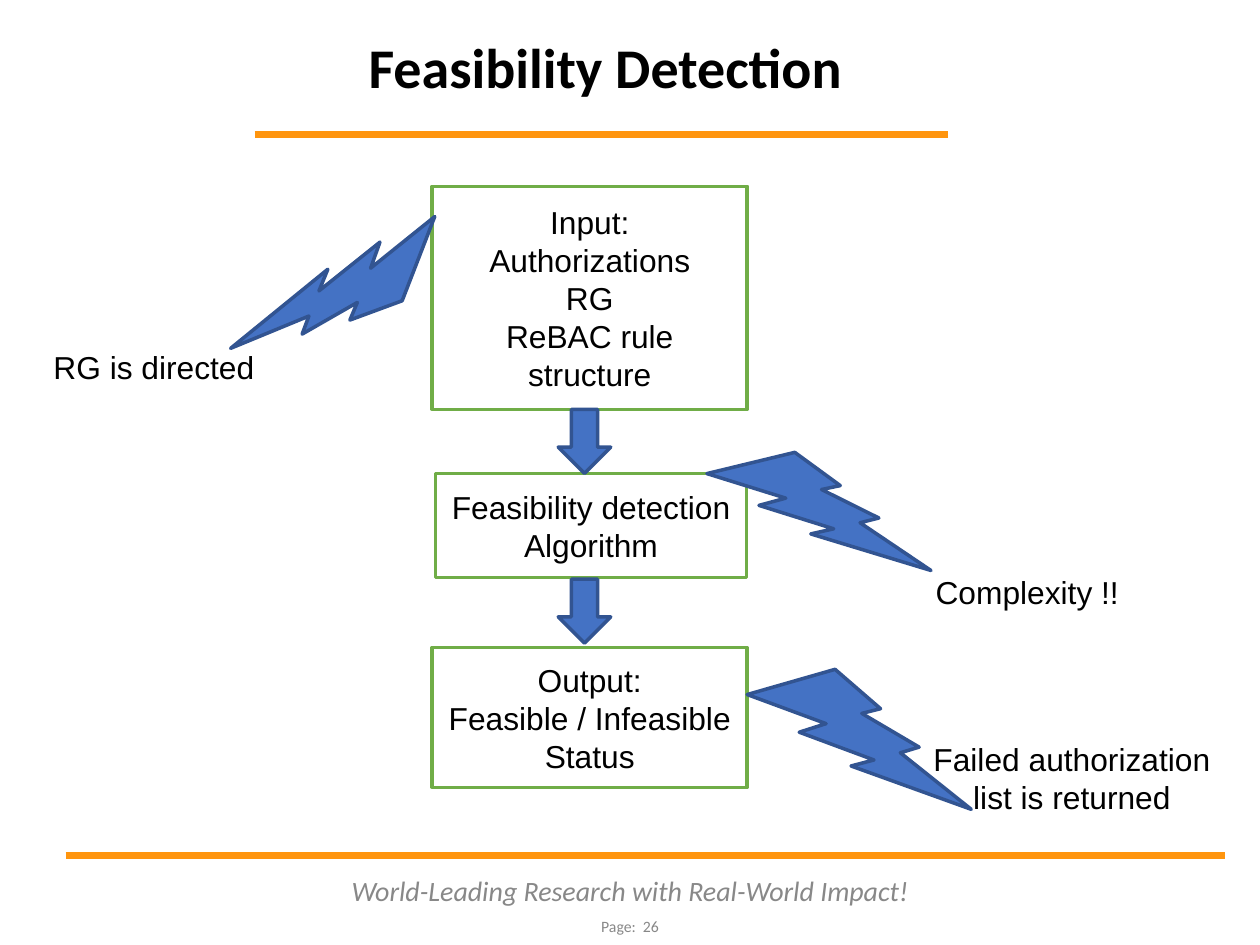
from lxml.etree import SubElement
from pptx import Presentation
from pptx.dml.color import RGBColor
from pptx.enum.shapes import MSO_CONNECTOR, MSO_SHAPE
from pptx.enum.text import MSO_ANCHOR, PP_ALIGN
from pptx.oxml.ns import qn
from pptx.util import Pt

COLORS = {
    "white": "FFFFFF",
    "black": "000000",
    "gray": "888888",
    "orange": "FF950E",
    "green": "70AD47",
    "blue": "4472C4",
    "navy": "325491",
}


def add_figure(kind, bounds, fill, outline=None):
    figure = slide.shapes.add_shape(kind, *[Pt(value) for value in bounds])
    figure.shadow.inherit = False
    figure.fill.solid()
    figure.fill.fore_color.rgb = RGBColor.from_string(COLORS[fill])
    if outline:
        figure.line.color.rgb = RGBColor.from_string(COLORS[outline])
        figure.line.width = Pt(2)
    else:
        figure.line.fill.background()
    return figure


def write_lines(box, lines, size, font="Arial", color="black", bold=False,
                italic=False, anchor=MSO_ANCHOR.MIDDLE):
    frame = box.text_frame
    frame.word_wrap = True
    frame.vertical_anchor = anchor
    frame.text = "\n".join(lines)
    for para in frame.paragraphs:
        para.alignment = PP_ALIGN.CENTER
        para.font.name = font
        para.font.size = Pt(size)
        para.font.bold = bold
        para.font.italic = italic
        para.font.color.rgb = RGBColor.from_string(COLORS[color])


deck = Presentation()
deck.slide_width, deck.slide_height = Pt(720), Pt(540)
slide = deck.slides.add_slide(deck.slide_layouts[6])

for left, right, top in [(145.5, 541.5, 77), (37.5, 700, 489)]:
    rule = slide.shapes.add_connector(
        MSO_CONNECTOR.STRAIGHT, Pt(left), Pt(top), Pt(right), Pt(top))
    rule.line.color.rgb = RGBColor.from_string(COLORS["orange"])
    rule.line.width = Pt(4)
    SubElement(rule._element.spPr, qn("a:effectLst"))

footers = [
    ((186, 496, 348, 26), "World-Leading Research with Real-World Impact!", 16, True),
    ((292.5, 516.5, 135, 26), "Page:  26", 9, False),
]
for bounds, text, size, italic in footers:
    footer = slide.shapes.add_textbox(*[Pt(value) for value in bounds])
    write_lines(footer, [text], size, "Calibri", "gray", italic=italic)

title = add_figure(MSO_SHAPE.RECTANGLE, (152, 23.5, 388, 37), "white")
write_lines(title, ["Feasibility Detection"], 32, "Calibri", bold=True,
            anchor=MSO_ANCHOR.BOTTOM)

boxes = [
    ((247, 370, 180, 80), "green", ["Output:", "Feasible / Infeasible", "Status"]),
    ((247, 106.5, 180, 127.5), "green",
     ["Input:", "Authorizations", "RG", "ReBAC rule structure"]),
    ((513.5, 426.5, 198, 36.5), None, ["Failed authorization", "list is returned"]),
    ((-2, 191.5, 180, 36.5), None, ["RG is directed"]),
    ((249, 270.5, 177.5, 59.5), "green", ["Feasibility detection Algorithm"]),
    ((483, 314, 208, 48), None, ["Complexity !!"]),
]
for bounds, outline, lines in boxes:
    box = add_figure(MSO_SHAPE.RECTANGLE, bounds, "white", outline)
    write_lines(box, lines, 18.1)

bolts = [
    ((404, 258.5, 128, 67.5), 0),
    ((427, 382.5, 128, 80), 0),
    ((131, 132, 128, 65.5), 124.4),
]
for bounds, angle in bolts:
    bolt = add_figure(MSO_SHAPE.LIGHTNING_BOLT, bounds, "blue", "navy")
    bolt.rotation = angle

for top in (234, 331):
    add_figure(MSO_SHAPE.DOWN_ARROW, (319, top, 30, 36.5), "blue", "navy")

deck.save("out.pptx")
